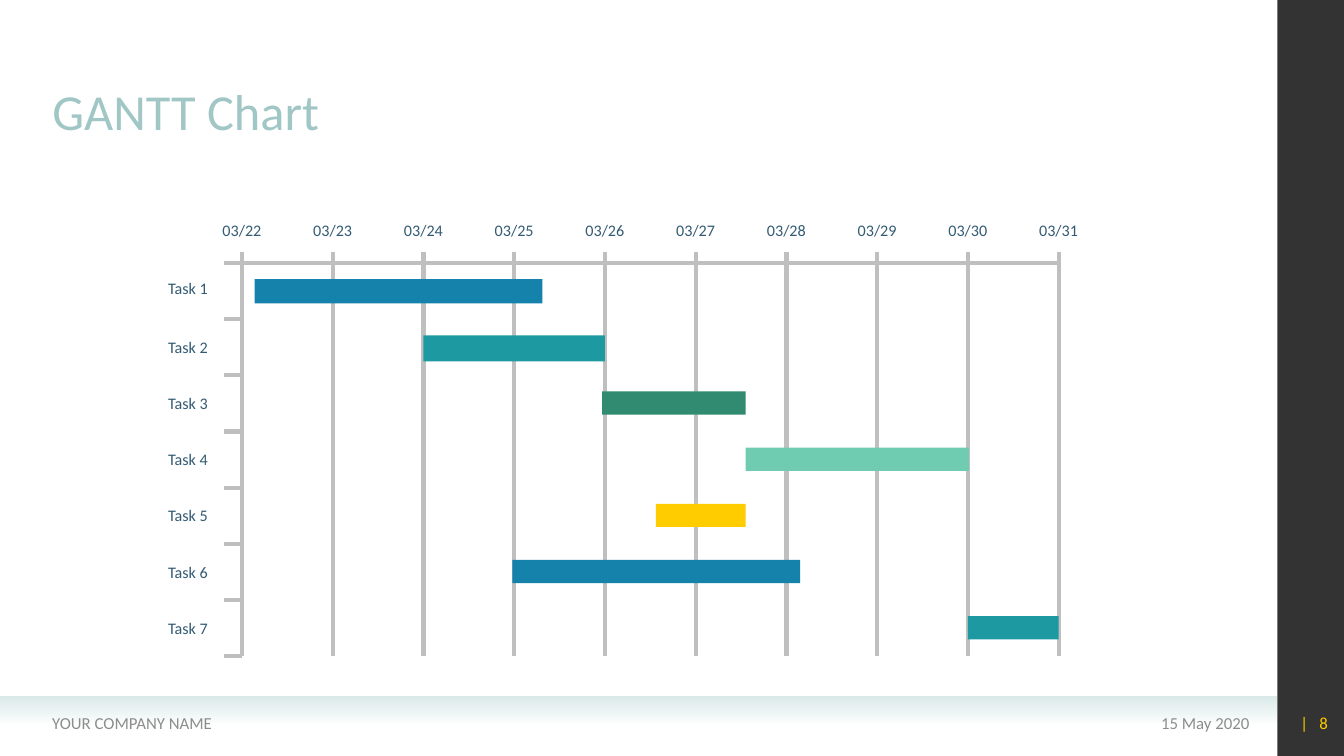
from dataclasses import dataclass

from lxml.etree import SubElement
from pptx import Presentation
from pptx.dml.color import RGBColor
from pptx.enum.shapes import MSO_CONNECTOR, MSO_SHAPE
from pptx.enum.text import MSO_ANCHOR as Anchor, MSO_AUTO_SIZE as AutoSize, PP_ALIGN as Align
from pptx.oxml.ns import qn
from pptx.util import Inches, Pt


@dataclass(frozen=True)
class Theme:
    font: str = "Calibri"
    title: str = "A0C7C5"
    label: str = "335B74"
    footer: str = "8C8C8C"
    grid: str = "BFBFBF"
    stripe: str = "333333"
    band: str = "D9E9E8"
    paper: str = "FFFFFF"
    blue: str = "1482AB"
    teal: str = "1D9AA1"
    green: str = "318B71"
    mint: str = "70CCB1"
    yellow: str = "FFCC00"
    title_size: float = 36
    footer_size: float = 12
    label_size: float = 11.5
    grid_width: float = 3


THEME = Theme()

TITLE = "GANTT Chart"
DATES = [f"03/{day}" for day in range(22, 32)]
# name, start in days after the first date, length in days, bar height, colour
TASKS = [
    ("Task 1", 0.14, 3.17, 0.24, THEME.blue),
    ("Task 2", 2, 2, 0.26, THEME.teal),
    ("Task 3", 3.97, 1.58, 0.23, THEME.green),
    ("Task 4", 5.55, 2.46, 0.23, THEME.mint),
    ("Task 5", 4.56, 0.99, 0.23, THEME.yellow),
    ("Task 6", 2.98, 3.17, 0.23, THEME.blue),
    ("Task 7", 8, 1, 0.23, THEME.teal),
]
# text, left, width, alignment, colour
FOOTERS = [
    ("15 May 2020", 9.1, 3.39, Align.RIGHT, THEME.footer),
    ("YOUR COMPANY NAME", 0.42, 4.9, Align.LEFT, THEME.footer),
    ("|   8", 12.6, 0.67, Align.RIGHT, THEME.yellow),
]

# Chart geometry in inches
LEFT, TOP, BOTTOM = 2.4, 2.61, 6.51
DAY = 0.9
ROW = (BOTTOM - TOP) / len(TASKS)
RIGHT = LEFT + DAY * (len(DATES) - 1)
TICK_LEFT, GRID_TOP = 2.22, 2.5
BAR_OFFSET = 0.16
LABEL_HEIGHT = 0.29
DATE_WIDTH, DATE_TOP = 0.61, 2.14
TASK_LEFT, TASK_WIDTH, TASK_OFFSET = 1.51, 0.65, 0.13


def place(shape, left, top, width, height):
    shape.left, shape.top = Inches(left), Inches(top)
    shape.width, shape.height = Inches(width), Inches(height)


def write(box, text, *, size, color, align=Align.LEFT, anchor=Anchor.MIDDLE,
          wrap=True, fit=AutoSize.NONE, spacing=None):
    frame = box.text_frame
    frame.word_wrap, frame.auto_size, frame.vertical_anchor = wrap, fit, anchor
    para = frame.paragraphs[0]
    para.alignment, para.line_spacing = align, spacing
    span = para.add_run()
    span.text = text
    span.font.name, span.font.size = THEME.font, Pt(size)
    span.font.color.rgb = RGBColor.from_string(color)


def add_text(page, text, left, top, width, height, **style):
    box = page.shapes.add_textbox(*map(Inches, (left, top, width, height)))
    write(box, text, **style)


def add_label(page, text, left, top, width, align):
    add_text(page, text, left, top, width, LABEL_HEIGHT, size=THEME.label_size,
             color=THEME.label, align=align, wrap=False, fit=AutoSize.SHAPE_TO_FIT_TEXT)


def add_block(page, left, top, width, height, color, fade_to=None):
    """Add a borderless rectangle, fading downwards if fade_to is given."""
    block = page.shapes.add_shape(MSO_SHAPE.RECTANGLE,
                                  *map(Inches, (left, top, width, height)))
    block.shadow.inherit = False
    block.line.fill.background()
    if fade_to:
        block.fill.gradient()
        block.fill.gradient_angle = 270
        for stop, stop_color in zip(block.fill.gradient_stops, (color, fade_to)):
            stop.color.rgb = RGBColor.from_string(stop_color)
    else:
        block.fill.solid()
        block.fill.fore_color.rgb = RGBColor.from_string(color)


def add_line(group, x1, y1, x2, y2):
    line = group.shapes.add_connector(MSO_CONNECTOR.STRAIGHT,
                                      *map(Inches, (x1, y1, x2, y2)))
    line.line.color.rgb = RGBColor.from_string(THEME.grid)
    line.line.width = Pt(THEME.grid_width)
    SubElement(line._element.spPr, qn("a:effectLst"))


def add_frame(page):
    add_block(page, 0, 6.9, 12.67, 0.31, THEME.band, fade_to=THEME.paper)
    add_block(page, 12.67, 0, 0.67, 7.5, THEME.stripe)
    for text, left, width, align, color in FOOTERS:
        add_text(page, text, left, 6.97, width, 0.4,
                 size=THEME.footer_size, color=color, align=align)
    title = page.shapes.title
    place(title, 0.42, 0.2, 11.21, 1.25)
    write(title, TITLE, size=THEME.title_size, color=THEME.title,
          anchor=Anchor.BOTTOM, spacing=0.9)


def add_grid(page):
    grid = page.shapes.add_group_shape()
    for day in range(len(DATES)):
        x = LEFT + DAY * day
        add_line(grid, x, GRID_TOP, x, BOTTOM)
    for row in range(len(TASKS) + 1):
        y = TOP + ROW * row
        add_line(grid, TICK_LEFT, y, LEFT if row else RIGHT, y)


def add_tasks(page):
    for row, (name, start, days, height, color) in enumerate(TASKS):
        y = TOP + ROW * row
        add_block(page, LEFT + DAY * start, y + BAR_OFFSET, DAY * days, height, color)
        offset = TASK_OFFSET if row else 0.1
        add_label(page, name, TASK_LEFT, y + offset, TASK_WIDTH, Align.RIGHT)


def add_dates(page):
    for day, date in enumerate(DATES):
        add_label(page, date, LEFT + DAY * day - DATE_WIDTH / 2, DATE_TOP,
                  DATE_WIDTH, Align.CENTER)


def main():
    deck = Presentation()
    deck.slide_width, deck.slide_height = Inches(13.33), Inches(7.5)
    page = deck.slides.add_slide(deck.slide_layouts[5])
    add_frame(page)
    add_grid(page)
    add_tasks(page)
    add_dates(page)
    deck.save("out.pptx")


if __name__ == "__main__":
    main()
